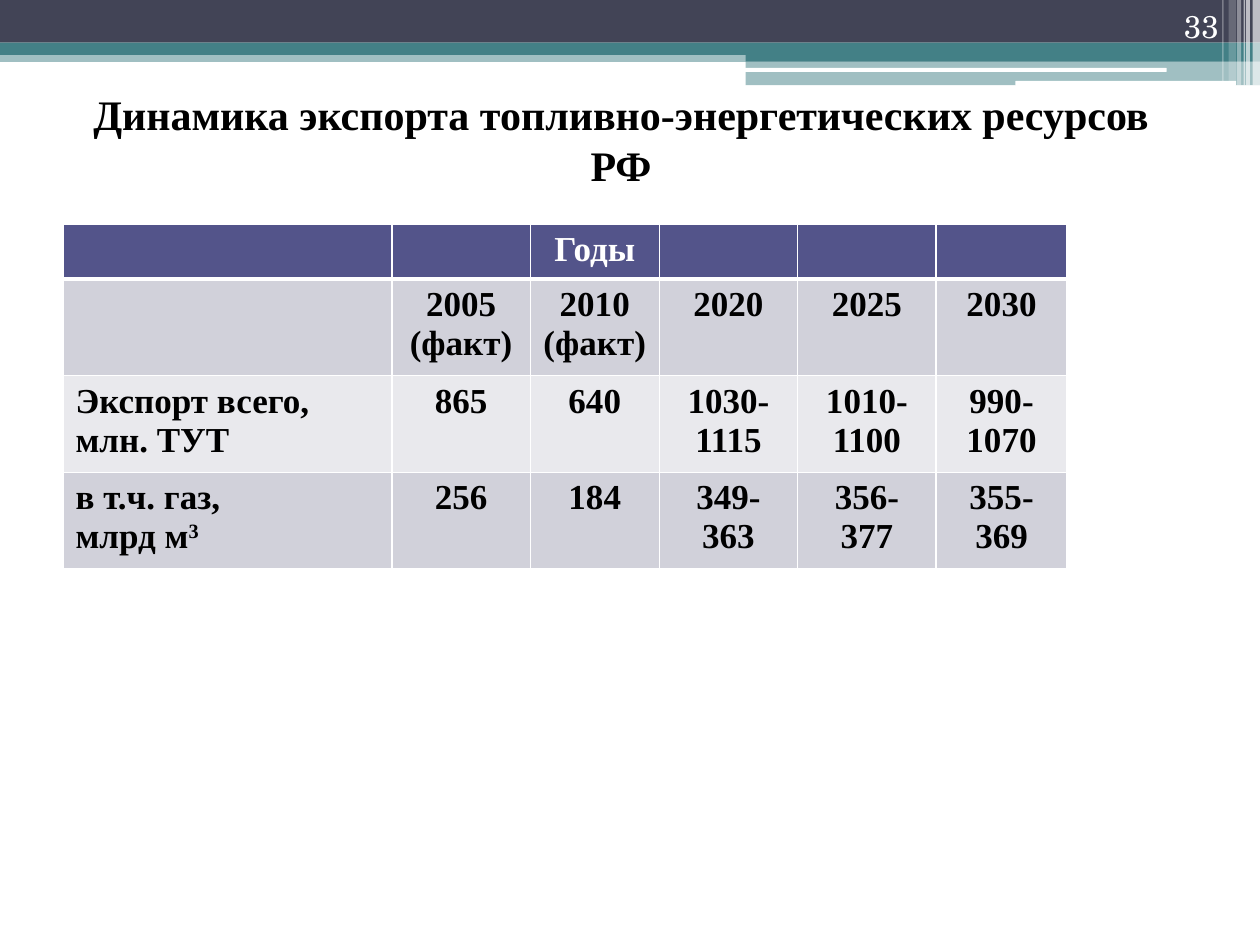
import lxml.etree
import pptx
import pptx.dml.color
import pptx.enum.shapes
import pptx.enum.text
import pptx.oxml.ns
import pptx.util
from pptx.util import Cm, Pt

COLORS = {
    "navy": "424456",
    "teal": "438086",
    "white": "FFFFFF",
    "black": "000000",
    "header": "53548A",
    "band_dark": "D1D1DA",
    "band_light": "E9E9ED",
}
SERIF = "Times New Roman"
CENTER = pptx.enum.text.PP_ALIGN.CENTER
RIGHT = pptx.enum.text.PP_ALIGN.RIGHT
RECT = pptx.enum.shapes.MSO_SHAPE.RECTANGLE
ROUND = pptx.enum.shapes.MSO_SHAPE.ROUNDED_RECTANGLE

# left, top, width, height in cm; colour; opacity in percent
BANDS = [
    (0, 1.02, 25.4, 0.23, "teal", 50),
    (0, 0, 25.4, 0.86, "navy", 100),
    (0, 0.86, 25.4, 0.25, "teal", 100),
    (15.03, 0.99, 10.37, 0.25, "teal", 100),
    (15.03, 1.24, 10.37, 0.48, "teal", 50),
]
WHITE_BARS = [(15.01, 1.37, 8.51, 0.08), (20.47, 1.63, 4.45, 0.1)]
# left, width, height in cm; opacity in percent
STRIPES = [
    (25.25, 0.15, 1.73, 65),
    (25.12, 0.08, 1.73, 65),
    (25.07, 0.03, 1.73, 60),
    (24.94, 0.08, 1.73, 40),
    (24.77, 0.15, 1.63, 20),
    (24.64, 0.03, 1.63, 30),
]

ROWS = [
    ["", "", "Годы", "", "", ""],
    ["", "2005\n(факт)", "2010\n(факт)", "2020", "2025", "2030"],
    ["Экспорт всего,\nмлн. ТУТ", "865", "640", "1030-1115", "1010-1100", "990-1070"],
    ["в т.ч. газ,\nмлрд м", "256", "184", "349-363", "356-377", "355-369"],
]
ROW_FILLS = ["header", "band_dark", "band_light", "band_dark"]
ROW_HEIGHTS = [1.03, 1.82, 1.82, 1.82]
COLUMN_WIDTHS = [6.63, 2.79, 2.6, 2.79, 2.79, 2.64]


def rgb(name):
    return pptx.dml.color.RGBColor.from_string(COLORS[name])


def add_bar(page, kind, left, top, width, height, color, opacity=100):
    bar = page.shapes.add_shape(kind, Cm(left), Cm(top), Cm(width), Cm(height))
    bar.shadow.inherit = False
    bar.line.fill.background()
    bar.fill.solid()
    bar.fill.fore_color.rgb = rgb(color)
    if opacity < 100:
        fill = bar.fill.fore_color._xFill
        alpha = lxml.etree.SubElement(fill[0], pptx.oxml.ns.qn("a:alpha"))
        alpha.set("val", str(opacity * 1000))


def format_text(frame, font, size, color, bold=False, align=None):
    for para in frame.paragraphs:
        para.alignment = align
        for span in para.runs:
            span.font.name = font
            span.font.size = Pt(size)
            span.font.bold = bold
            span.font.color.rgb = rgb(color)


def add_text(page, left, top, width, height, text, anchor, **style):
    box = page.shapes.add_textbox(Cm(left), Cm(top), Cm(width), Cm(height))
    frame = box.text_frame
    frame.word_wrap = True
    frame.vertical_anchor = anchor
    frame.text = text
    format_text(frame, **style)


def set_borders(cell, bottom):
    """Draw white cell edges; bottom is the lower edge's width in points."""
    properties = cell._tc.get_or_add_tcPr()
    edges = [("a:lnL", 1), ("a:lnR", 1), ("a:lnT", 1), ("a:lnB", bottom)]
    for position, (tag, width) in enumerate(edges):
        line = lxml.etree.Element(pptx.oxml.ns.qn(tag), w=str(Pt(width)))
        fill = lxml.etree.SubElement(line, pptx.oxml.ns.qn("a:solidFill"))
        lxml.etree.SubElement(fill, pptx.oxml.ns.qn("a:srgbClr"), val=COLORS["white"])
        properties.insert(position, line)


def add_export_table(page):
    frame = page.shapes.add_table(
        len(ROWS), len(COLUMN_WIDTHS), Cm(1.27), Cm(4.52),
        Cm(sum(COLUMN_WIDTHS)), Cm(sum(ROW_HEIGHTS)))
    table = frame.table
    for column, width in zip(table.columns, COLUMN_WIDTHS):
        column.width = Cm(width)
    for r, (texts, height) in enumerate(zip(ROWS, ROW_HEIGHTS)):
        table.rows[r].height = Cm(height)
        for c, text in enumerate(texts):
            cell = table.cell(r, c)
            cell.fill.solid()
            cell.fill.fore_color.rgb = rgb(ROW_FILLS[r])
            # The header's lower edge is shared with the row beneath it.
            set_borders(cell, bottom=3 if r == 0 else 1)
            cell.text_frame.text = text
            format_text(cell.text_frame, SERIF, 20, "black" if r else "white",
                        bold=True, align=CENTER if c else None)
    add_superscript(table.cell(3, 0).text_frame, "3")
    return table


def add_superscript(frame, text):
    span = frame.paragraphs[-1].add_run()
    span.text = text
    span.font.name = SERIF
    span.font.size = Pt(20)
    span.font.bold = True
    span.font.color.rgb = rgb("black")
    span.font._element.set("baseline", "30000")


def main():
    deck = pptx.Presentation()
    deck.slide_width, deck.slide_height = Cm(25.4), Cm(19.05)
    page = deck.slides.add_slide(deck.slide_layouts[6])

    for band in BANDS:
        add_bar(page, RECT, *band)
    for bar in WHITE_BARS:
        add_bar(page, ROUND, *bar, "white")
    for left, width, height, opacity in STRIPES:
        add_bar(page, RECT, left, 0, width, height, "white", opacity)

    add_text(page, 1.09, 1.32, 22.86, 2.97,
             "Динамика экспорта топливно-энергетических ресурсов РФ",
             pptx.enum.text.MSO_ANCHOR.MIDDLE,
             font=SERIF, size=24, color="black", bold=True, align=CENTER)
    add_export_table(page)
    add_text(page, 22.71, 0, 2.11, 1.02, "33", pptx.enum.text.MSO_ANCHOR.BOTTOM,
             font="TeX Gyre Schola", size=18, color="white", align=RIGHT)

    deck.save("out.pptx")


if __name__ == "__main__":
    main()
